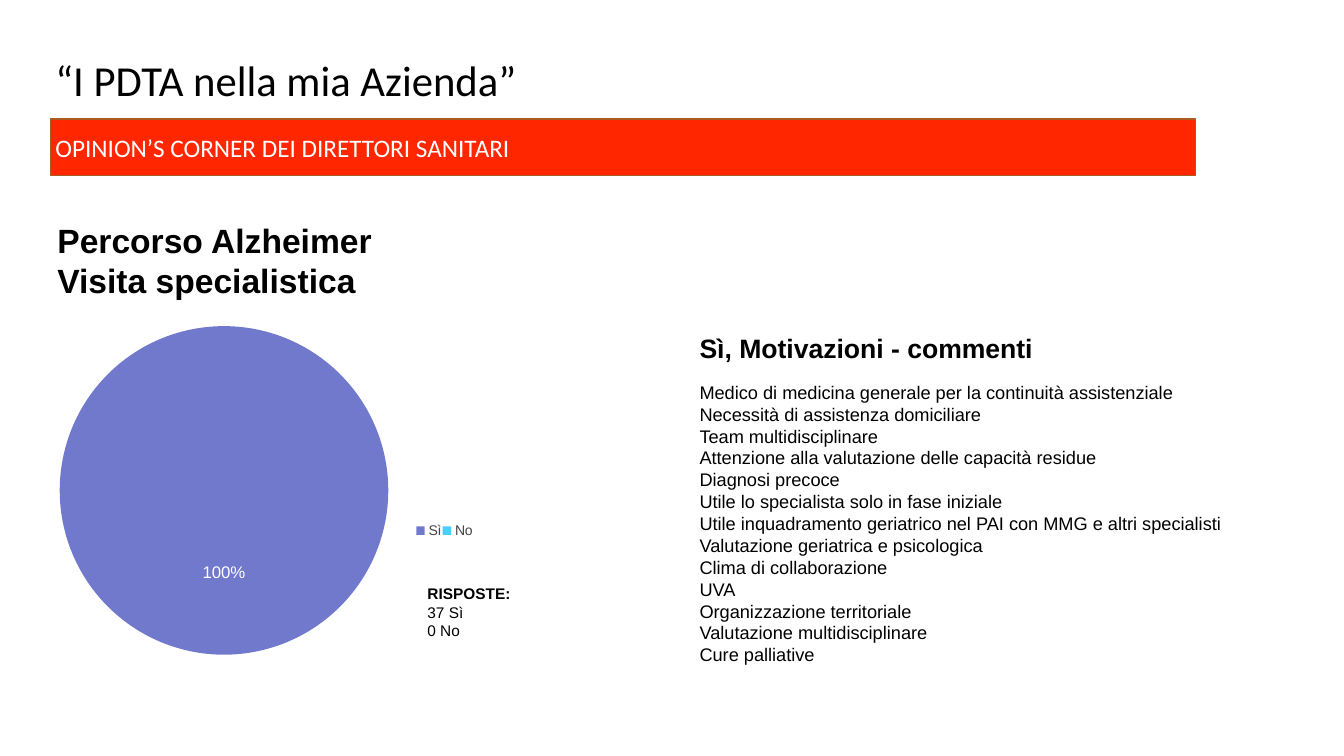
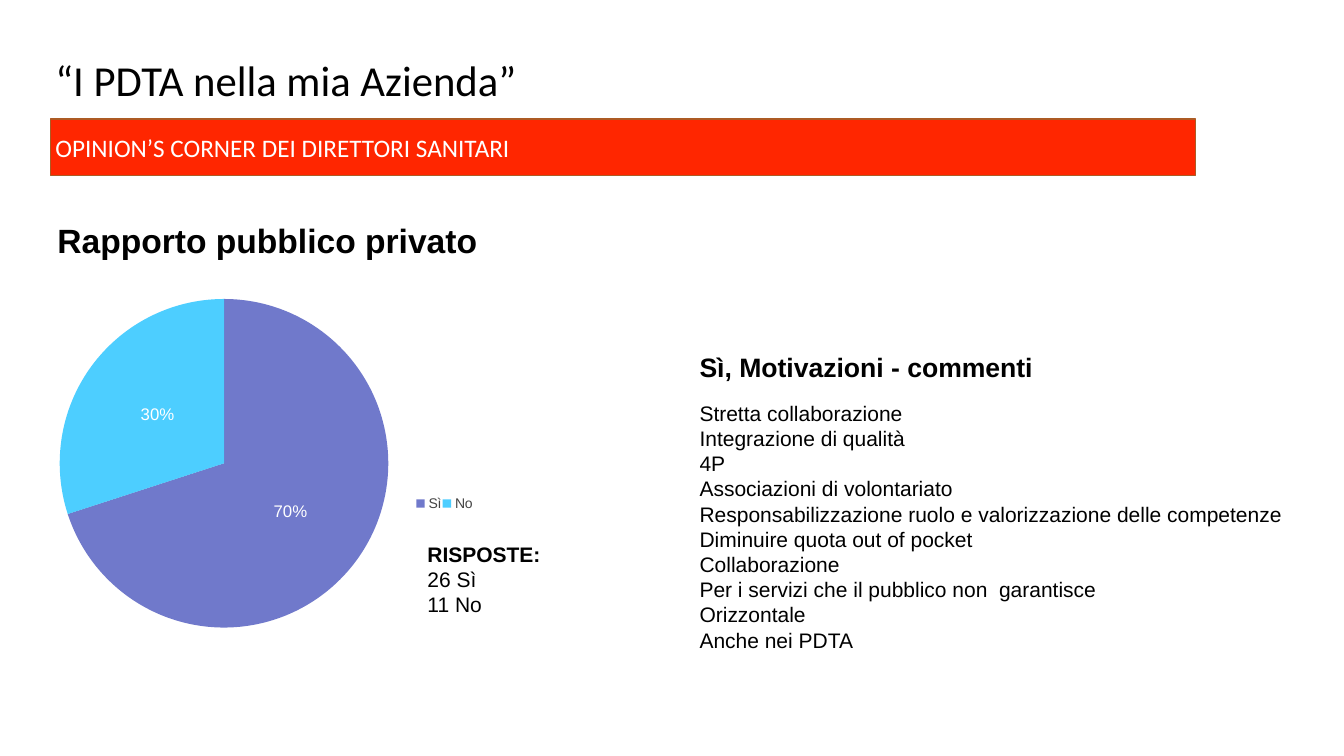
import pptx
import pptx.chart.data
import pptx.dml.color
import pptx.enum.chart
import pptx.enum.shapes
import pptx.enum.text
import pptx.oxml
import pptx.oxml.ns
import pptx.util

Pt = pptx.util.Pt
qn = pptx.oxml.ns.qn

# Content
TITLE = "“I PDTA nella mia Azienda”"
BAND = "OPINION’S CORNER DEI DIRETTORI SANITARI"
COMMENTS_HEADING = "Sì, Motivazioni - commenti"
ANSWERS = ("Sì", "No")

# Places are (left, top, width, height) in points
SURVEYS = [
    {
        "topic": ["Percorso Alzheimer", "Visita specialistica"],
        "topic_height": 62.6,
        "counts": (37, 0),
        "counts_place": (301.7, 414, 70.6, 54.7),
        "counts_size": 11,
        "shares": (100, 0),
        "chart_top": 231.8,
        "comments_place": (496.1, 233.3, 403.2, 235.4),
        "comments_size": 13,
        "comments": [
            "Medico di medicina generale per la continuità assistenziale",
            "Necessità di assistenza domiciliare",
            "Team multidisciplinare",
            "Attenzione alla valutazione delle capacità residue",
            "Diagnosi precoce",
            "Utile lo specialista solo in fase iniziale",
            "Utile inquadramento geriatrico nel PAI con MMG e altri specialisti",
            "Valutazione geriatrica e psicologica",
            "Clima di collaborazione",
            "UVA",
            "Organizzazione territoriale",
            "Valutazione multidisciplinare",
            "Cure palliative",
        ],
    },
    {
        "topic": ["Rapporto pubblico privato"],
        "topic_height": 34.6,
        "counts": (26, 11),
        "counts_place": (301.7, 383, 92.9, 74.9),
        "counts_size": 15,
        "shares": (70, 30),
        "chart_top": 212.4,
        "comments_place": (496.1, 247, 447.1, 211),
        "comments_size": 15,
        "comments": [
            "Stretta collaborazione",
            "Integrazione di qualità",
            "4P",
            "Associazioni di volontariato",
            "Responsabilizzazione ruolo e valorizzazione delle competenze",
            "Diminuire quota out of pocket",
            "Collaborazione",
            "Per i servizi che il pubblico non  garantisce",
            "Orizzontale",
            "Anche nei PDTA",
        ],
    },
]

# Shared style
COLORS = {
    "text": "000000",
    "light": "FFFFFF",
    "band": "FF2600",
    "band_line": "AD5B24",
    "yes": "5862C2",
    "no": "2EC6FF",
    "legend": "444444",
}
INSET = 3.6
HEADING_GAP = 12.65
SLICE_OPACITY = 85
PLOT_LAYOUT = (0.005, 0.005, 0.796, 0.988)
LEGEND_LAYOUT = (0.86, 0.59, 0.14, 0.06)


def rgb(name):
    return pptx.dml.color.RGBColor.from_string(COLORS[name])


def points(place):
    return [Pt(length) for length in place]


def style_font(font, size, color="text", face="Arial", bold=False):
    font.size, font.name, font.bold = Pt(size), face, bold
    font.color.rgb = rgb(color)


def write(frame, lines, size, color="text", face="Arial", bold=False,
          heading=None, heading_size=None, heading_gap=0, spacing=None,
          anchor=pptx.enum.text.MSO_ANCHOR.TOP, wrap=True):
    """Fill a text frame with an optional bold heading and plain lines."""
    frame.word_wrap = wrap
    frame.auto_size = pptx.enum.text.MSO_AUTO_SIZE.NONE
    frame.vertical_anchor = anchor
    frame.margin_left = frame.margin_right = Pt(INSET)
    frame.margin_top = frame.margin_bottom = Pt(INSET)
    rows = [(line, size, bold, 0) for line in lines]
    if heading:
        rows.insert(0, (heading, heading_size or size, True, heading_gap))
    for index, (text, row_size, row_bold, gap) in enumerate(rows):
        paragraph = frame.add_paragraph() if index else frame.paragraphs[0]
        paragraph.alignment = pptx.enum.text.PP_ALIGN.LEFT
        paragraph.space_before, paragraph.space_after = Pt(0), Pt(gap)
        if spacing:
            paragraph.line_spacing = spacing
        run = paragraph.add_run()
        run.text = text
        style_font(run.font, row_size, color, face, row_bold)


def add_text(slide, place, lines, size, **style):
    box = slide.shapes.add_textbox(*points(place))
    write(box.text_frame, lines, size, **style)


def set_layout(parent, position, fractions, inner=False):
    """Place a chart part by fractions of the chart area."""
    for old in parent.findall(qn("c:layout")):
        parent.remove(old)
    target = '<c:layoutTarget val="inner"/>' if inner else ""
    modes = "".join(f'<c:{axis}Mode val="edge"/>' for axis in "xy")
    sizes = "".join(f'<c:{side} val="{value}"/>'
                    for side, value in zip("xywh", fractions))
    parent.insert(position, pptx.oxml.parse_xml(
        f'<c:layout {pptx.oxml.ns.nsdecls("c")}><c:manualLayout>'
        f"{target}{modes}{sizes}</c:manualLayout></c:layout>"))


def add_header(slide):
    title = slide.shapes.title
    title.left, title.top, title.width, title.height = points((36, 38.9, 671.8, 40.3))
    middle = pptx.enum.text.MSO_ANCHOR.MIDDLE
    write(title.text_frame, [TITLE], 30.5, face="Calibri", spacing=0.9, anchor=middle)

    band = slide.shapes.add_shape(pptx.enum.shapes.MSO_SHAPE.RECTANGLE,
                                  *points((36, 85, 818, 40.3)))
    band.shadow.inherit = False
    band.fill.solid()
    band.fill.fore_color.rgb = rgb("band")
    band.line.color.rgb = rgb("band_line")
    band.line.width = Pt(1)
    write(band.text_frame, [BAND], 18, color="light", face="Calibri", anchor=middle)


def add_shares(slide, top, shares):
    data = pptx.chart.data.CategoryChartData()
    data.categories = ANSWERS
    data.add_series("Risposte", shares)
    chart = slide.shapes.add_chart(
        pptx.enum.chart.XL_CHART_TYPE.PIE,
        *points((39.6, top, 298.8, 237.6)), data).chart
    chart.has_title = False
    style_font(chart.font, 10, face="Calibri")

    # Slices
    pie = chart.plots[0]
    pie.vary_by_categories = True
    for index, color in enumerate(("yes", "no")):
        slice_format = pie.series[0].points[index].format
        slice_format.fill.solid()
        slice_format.fill.fore_color.rgb = rgb(color)
        slice_format.line.fill.background()
    for tint in pie.series[0]._element.iter(qn("a:srgbClr")):
        tint.append(pptx.oxml.parse_xml(
            f'<a:alpha {pptx.oxml.ns.nsdecls("a")} val="{SLICE_OPACITY * 1000}"/>'))

    # Percentages
    pie.has_data_labels = True
    labels = pie.data_labels
    labels.show_percentage, labels.show_value = True, False
    labels.number_format, labels.number_format_is_linked = "0%", False
    labels.position = pptx.enum.chart.XL_LABEL_POSITION.CENTER
    style_font(labels.font, 12, "light")

    # Legend and plot area
    chart.has_legend = True
    legend = chart.legend
    legend.position = pptx.enum.chart.XL_LEGEND_POSITION.RIGHT
    legend.include_in_layout = True
    style_font(legend.font, 10, "legend")
    set_layout(legend._element, 1, LEGEND_LAYOUT)
    set_layout(chart._chartSpace.chart.plotArea, 0, PLOT_LAYOUT, inner=True)


def add_survey(deck, survey):
    slide = deck.slides.add_slide(deck.slide_layouts[5])
    add_header(slide)
    add_text(slide, (37.4, 153.4, 447.1, survey["topic_height"]),
             survey["topic"], 24, bold=True)
    add_text(slide, survey["counts_place"],
             [f"{count} {answer}" for count, answer in zip(survey["counts"], ANSWERS)],
             survey["counts_size"], heading="RISPOSTE:", wrap=False)
    add_shares(slide, survey["chart_top"], survey["shares"])
    add_text(slide, survey["comments_place"], survey["comments"],
             survey["comments_size"], heading=COMMENTS_HEADING,
             heading_size=19, heading_gap=HEADING_GAP)


def main():
    deck = pptx.Presentation()
    deck.slide_width, deck.slide_height = Pt(960), Pt(540)
    for survey in SURVEYS:
        add_survey(deck, survey)
    deck.save("out.pptx")


if __name__ == "__main__":
    main()
